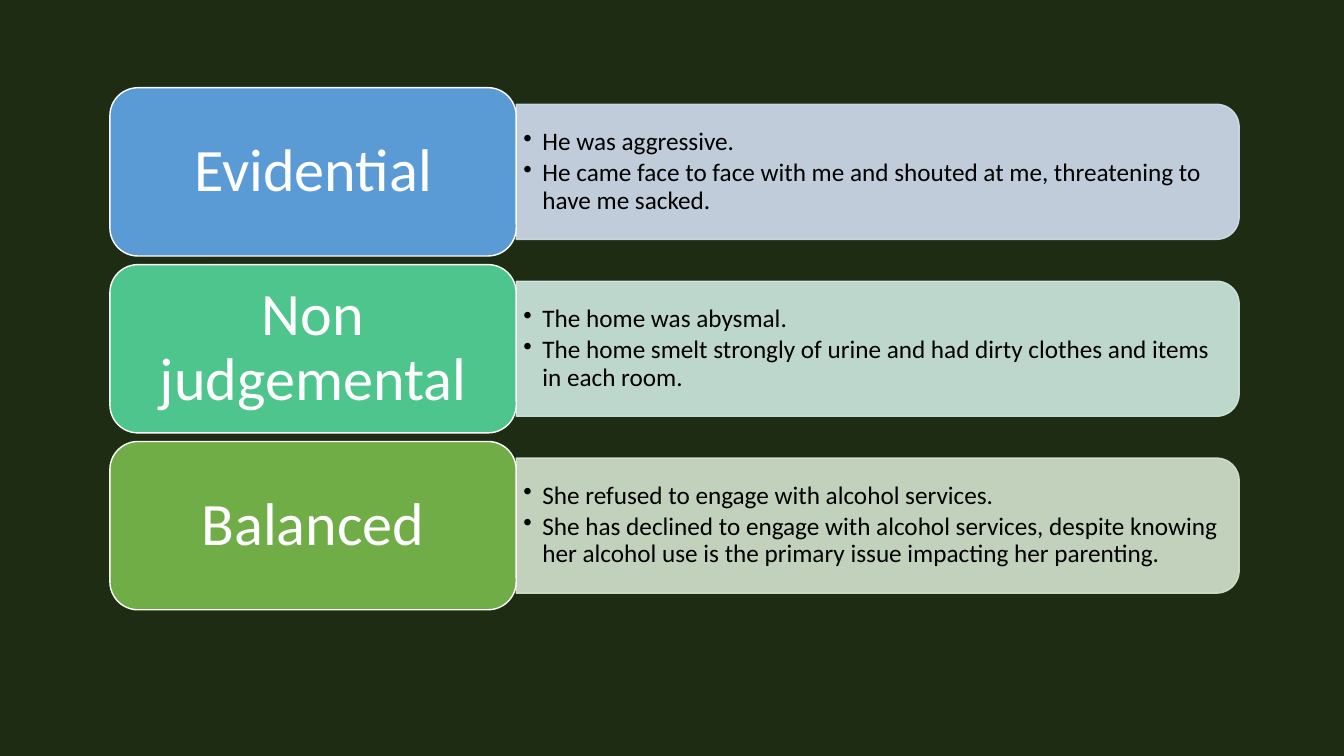
import pptx
import pptx.dml.color
import pptx.enum.shapes
import pptx.enum.text
import pptx.oxml.ns
import pptx.util
from lxml import etree
from pptx.util import Inches

RGBColor = pptx.dml.color.RGBColor
SHAPES = pptx.enum.shapes.MSO_SHAPE
ALIGN = pptx.enum.text.PP_ALIGN
qn = pptx.oxml.ns.qn

DARK_GREEN = RGBColor(0x1D, 0x2C, 0x12)
WHITE = RGBColor(0xFF, 0xFF, 0xFF)
BLACK = RGBColor(0x00, 0x00, 0x00)
BLUE = RGBColor(0x5B, 0x9B, 0xD5)
PALE_BLUE = RGBColor(0xD2, 0xDE, 0xEF)
TEAL = RGBColor(0x4D, 0xC5, 0x8D)
PALE_TEAL = RGBColor(0xD0, 0xEA, 0xE1)
GREEN = RGBColor(0x70, 0xAD, 0x47)
PALE_GREEN = RGBColor(0xD5, 0xE3, 0xCF)

QUALITIES = [
    ("Evidential", BLUE, PALE_BLUE, [
        "He was aggressive.",
        "He came face to face with me and shouted at me, threatening to have me sacked."]),
    ("Non judgemental", TEAL, PALE_TEAL, [
        "The home was abysmal.",
        "The home smelt strongly of urine and had dirty clothes and items in each room."]),
    ("Balanced", GREEN, PALE_GREEN, [
        "She refused to engage with alcohol services.",
        "She has declined to engage with alcohol services, despite knowing her alcohol use "
        "is the primary issue impacting her parenting."]),
]

FIRST_TOP, LAST_TOP = 0.87, 4.38
ROW_PITCH = (LAST_TOP - FIRST_TOP) / (len(QUALITIES) - 1)
HEADING_LEFT, HEADING_WIDTH, HEADING_HEIGHT = 1.09, 4.03, 1.67
PANEL_LEFT = HEADING_LEFT + HEADING_WIDTH
PANEL_LENGTH, PANEL_DEPTH = 7.17, 1.34
EXAMPLES_WIDTH, EXAMPLES_HEIGHT = 7.1, 1.21

HEADING_FORMAT = {"size": pptx.util.Pt(43), "name": "Calibri"}
EXAMPLE_FORMAT = {"size": pptx.util.Pt(18), "name": "Calibri"}


def set_attributes(target, values):
    for name, value in values.items():
        setattr(target, name, value)


def add_block(slide, kind, box, fill, outline):
    block = slide.shapes.add_shape(kind, *map(Inches, box))
    block.shadow.inherit = False
    block.fill.solid()
    block.fill.fore_color.rgb = fill
    block.line.color.rgb = outline
    block.line.width = pptx.util.Pt(1)
    return block


def set_frame(frame, side, edge):
    set_attributes(frame, {
        "word_wrap": True,
        "vertical_anchor": pptx.enum.text.MSO_ANCHOR.MIDDLE,
        "margin_left": Inches(side), "margin_right": Inches(side),
        "margin_top": Inches(edge), "margin_bottom": Inches(edge)})


def write_paragraph(paragraph, text, align, font_format, color):
    paragraph.text = text
    set_attributes(paragraph, {"alignment": align, "line_spacing": 0.9})
    font = paragraph.runs[0].font
    set_attributes(font, font_format)
    font.color.rgb = color


def add_bullet(paragraph):
    properties = paragraph._p.get_or_add_pPr()
    properties.set("marL", str(Inches(0.19)))
    properties.set("indent", str(-Inches(0.19)))
    etree.SubElement(properties, qn("a:buChar"), char="•")


def add_panel(slide, middle, color):
    """Draw the translucent panel, turned so that its round corners face right."""
    box = (PANEL_LEFT + (PANEL_LENGTH - PANEL_DEPTH) / 2, middle - PANEL_LENGTH / 2,
           PANEL_DEPTH, PANEL_LENGTH)
    panel = add_block(slide, SHAPES.ROUND_2_SAME_RECTANGLE, box, color, color)
    panel.rotation = 90
    for shade in panel._element.spPr.iter(qn("a:srgbClr")):
        etree.SubElement(shade, qn("a:alpha"), val="90000")


def add_examples(slide, middle, examples):
    box = (PANEL_LEFT, middle - EXAMPLES_HEIGHT / 2, EXAMPLES_WIDTH, EXAMPLES_HEIGHT)
    frame = slide.shapes.add_textbox(*map(Inches, box)).text_frame
    set_frame(frame, 0.07, 0.04)
    for index, example in enumerate(examples):
        paragraph = frame.add_paragraph() if index else frame.paragraphs[0]
        write_paragraph(paragraph, example, ALIGN.LEFT, EXAMPLE_FORMAT, BLACK)
        paragraph.space_after = pptx.util.Pt(2.7)
        add_bullet(paragraph)


def add_heading(slide, middle, heading, color):
    box = (HEADING_LEFT, middle - HEADING_HEIGHT / 2, HEADING_WIDTH, HEADING_HEIGHT)
    block = add_block(slide, SHAPES.ROUNDED_RECTANGLE, box, color, WHITE)
    set_frame(block.text_frame, 0.18, 0.09)
    write_paragraph(block.text_frame.paragraphs[0], heading, ALIGN.CENTER,
                    HEADING_FORMAT, WHITE)


def main():
    deck = pptx.Presentation()
    deck.slide_width, deck.slide_height = Inches(13.33), Inches(7.5)
    slide = deck.slides.add_slide(deck.slide_layouts[6])
    slide.background.fill.solid()
    slide.background.fill.fore_color.rgb = DARK_GREEN
    for row, (heading, color, pale_color, examples) in enumerate(QUALITIES):
        middle = FIRST_TOP + row * ROW_PITCH + HEADING_HEIGHT / 2
        add_panel(slide, middle, pale_color)
        add_examples(slide, middle, examples)
        add_heading(slide, middle, heading, color)
    deck.save("out.pptx")


if __name__ == "__main__":
    main()
